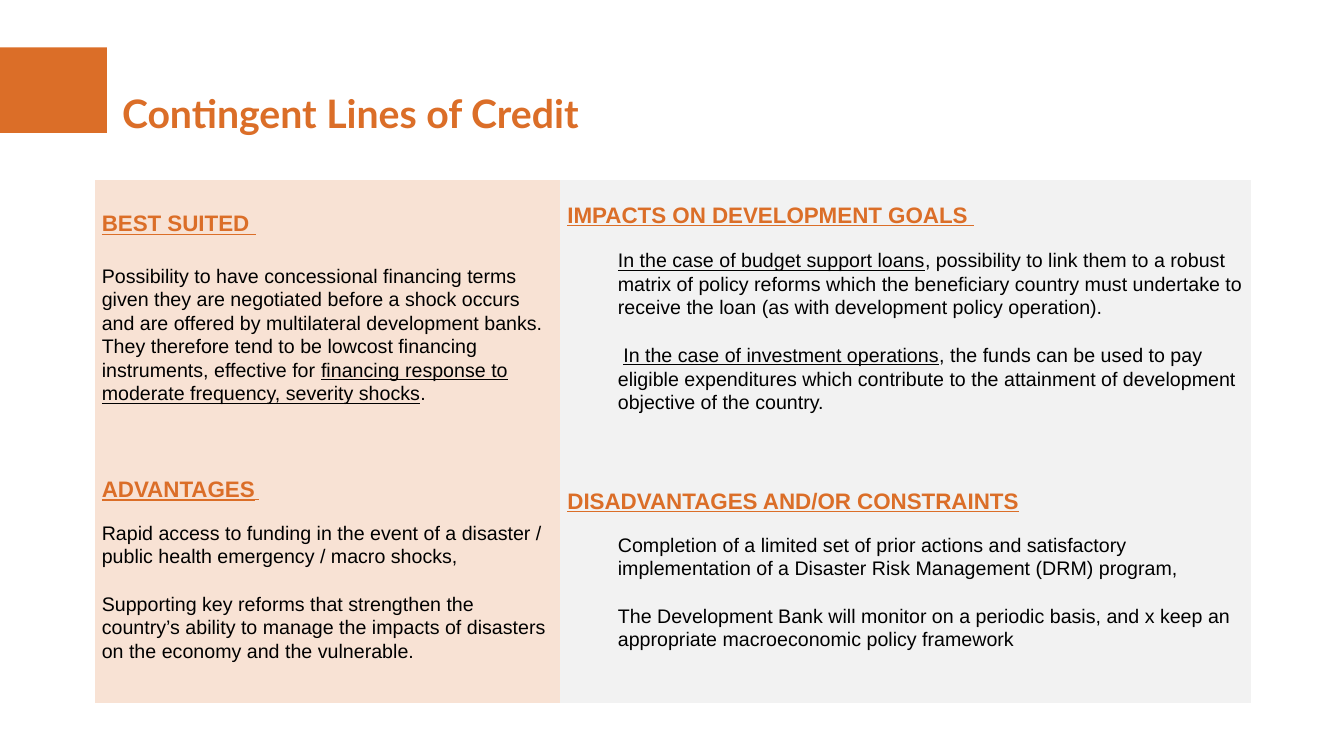
from pptx import Presentation
from pptx.dml.color import RGBColor
from pptx.enum.shapes import MSO_SHAPE
from pptx.enum.text import MSO_ANCHOR, MSO_AUTO_SIZE, PP_ALIGN
from pptx.util import Inches, Pt

RECT = MSO_SHAPE.RECTANGLE
MIDDLE = MSO_ANCHOR.MIDDLE
LEFT = PP_ALIGN.LEFT
NO_FIT = MSO_AUTO_SIZE.NONE
PLAIN_TABLE = "{2D5ABB26-0587-4C30-8999-92F81FD0307C}"

ORANGE, PEACH, GREY, BLACK = "DB6E28", "F8E2D4", "F2F2F2", "000000"


def color(code):
    return RGBColor.from_string(code)


def write(para, text, size=14, font="Arial", ink=BLACK, bold=False,
          under=False, lines=1.07, before=0, indent=0):
    """Add a run to para and set the paragraph's spacing and left margin."""
    para.alignment = LEFT
    para.line_spacing = lines
    para.space_before = Pt(before)
    props = para._p.get_or_add_pPr()
    props.set("marL", str(Inches(indent)))
    props.set("indent", "0")
    run = para.add_run()
    run.text = text
    face = run.font
    face.size, face.name = Pt(size), font
    face.bold, face.underline = bold, under
    face.color.rgb = color(ink)


class Deck:
    """Style and current slide; lengths are percentages of the slide's size."""

    def __init__(self):
        self.file = Presentation()
        self.file.slide_width = Inches(13.33)
        self.file.slide_height = Inches(7.5)
        self.slide = self.file.slides.add_slide(self.file.slide_layouts[5])

    def wide(self, share):
        return round(self.file.slide_width * share / 100)

    def high(self, share):
        return round(self.file.slide_height * share / 100)

    def box(self, x, y, w, h):
        return self.wide(x), self.high(y), self.wide(w), self.high(h)

    def title(self, text, *area):
        shape = self.slide.shapes.title
        shape.left, shape.top, shape.width, shape.height = self.box(*area)
        frame = shape.text_frame
        frame.auto_size = NO_FIT
        frame.word_wrap = True
        frame.vertical_anchor = MIDDLE
        frame.margin_left = frame.margin_top = frame.margin_bottom = 0
        frame.margin_right = Inches(0.1)
        write(frame.paragraphs[0], text, size=28, font="Lato", ink=ORANGE,
              bold=True, lines=0.9)

    def block(self, fill, *area):
        shape = self.slide.shapes.add_shape(RECT, *self.box(*area))
        shape.shadow.inherit = False
        shape.fill.solid()
        shape.fill.fore_color.rgb = color(fill)
        shape.line.fill.background()

    def table(self, x, y, cols, rows, fills, cells):
        area = self.box(x, y, sum(cols), sum(rows))
        grid = self.slide.shapes.add_table(len(rows), len(cols), *area).table
        grid.first_row = grid.horz_banding = False
        grid._tbl.tblPr[0].text = PLAIN_TABLE
        for col, share in zip(grid.columns, cols):
            col.width = self.wide(share)
        for row, share in zip(grid.rows, rows):
            row.height = self.high(share)
        for r, line in enumerate(cells):
            for c, panel in enumerate(line):
                self.panel(grid.cell(r, c), fills[c], **panel)

    def panel(self, cell, fill, head, gap, body, tail="", indent=0):
        """Fill a cell: underlined heading, then paragraphs of (text, underline)."""
        cell.fill.solid()
        cell.fill.fore_color.rgb = color(fill)
        cell.vertical_anchor = MIDDLE
        cell.margin_left = cell.margin_right = Inches(0.07)
        cell.margin_top = cell.margin_bottom = 0
        frame = cell.text_frame
        top = frame.paragraphs[0]
        write(top, head, size=16, ink=ORANGE, bold=True, under=True)
        if tail:
            write(top, tail, size=11, ink=ORANGE, under=True)
        for i, runs in enumerate(body):
            para = frame.add_paragraph()
            for text, under in runs:
                write(para, text, under=under, indent=indent,
                      before=17.2 if i else gap)


SUITED = dict(head="BEST SUITED ", gap=19.7, body=[[
    ("Possibility to have concessional financing terms given they are "
     "negotiated before a shock occurs and are offered by multilateral "
     "development banks. They therefore tend to be lowcost financing "
     "instruments, effective for ", False),
    ("financing response to moderate frequency, severity shocks", True),
    (".", False)]])
IMPACTS = dict(head="IMPACTS ON DEVELOPMENT GOALS ", gap=14.8, indent=0.5, body=[
    [("In the case of budget support loans", True),
     (", possibility to link them to a robust matrix of policy reforms which "
      "the beneficiary country must undertake to receive the loan (as with "
      "development policy operation).", False)],
    [(" ", False),
     ("In the case of investment operations", True),
     (", the funds can be used to pay eligible expenditures which contribute "
      "to the attainment of development objective of the country.", False)]])
PROS = dict(head="ADVANTAGES", tail=" ", gap=13.5, body=[
    [("Rapid access to funding in the event of a disaster / public health "
      "emergency / macro shocks,", False)],
    [("Supporting key reforms that strengthen the country’s ability to manage "
      "the impacts of disasters on the economy and the vulnerable.", False)]])
CONS = dict(head="DISADVANTAGES AND/OR CONSTRAINTS", gap=13.5, indent=0.5, body=[
    [("Completion of a limited set of prior actions and satisfactory "
      "implementation of a Disaster Risk Management (DRM) program,", False)],
    [("The Development Bank will monitor on a periodic basis, and x keep an "
      "appropriate macroeconomic policy framework", False)]])


def main():
    deck = Deck()
    deck.block(ORANGE, 0, 6.27, 7.95, 11.33)
    deck.title("Contingent Lines of Credit", 9.08, 13.07, 86.25, 4.53)
    deck.table(7.05, 23.8, cols=[34.65, 51.35], rows=[33.75, 35.45],
               fills=[PEACH, GREY], cells=[[SUITED, IMPACTS], [PROS, CONS]])
    deck.file.save("out.pptx")


if __name__ == "__main__":
    main()
